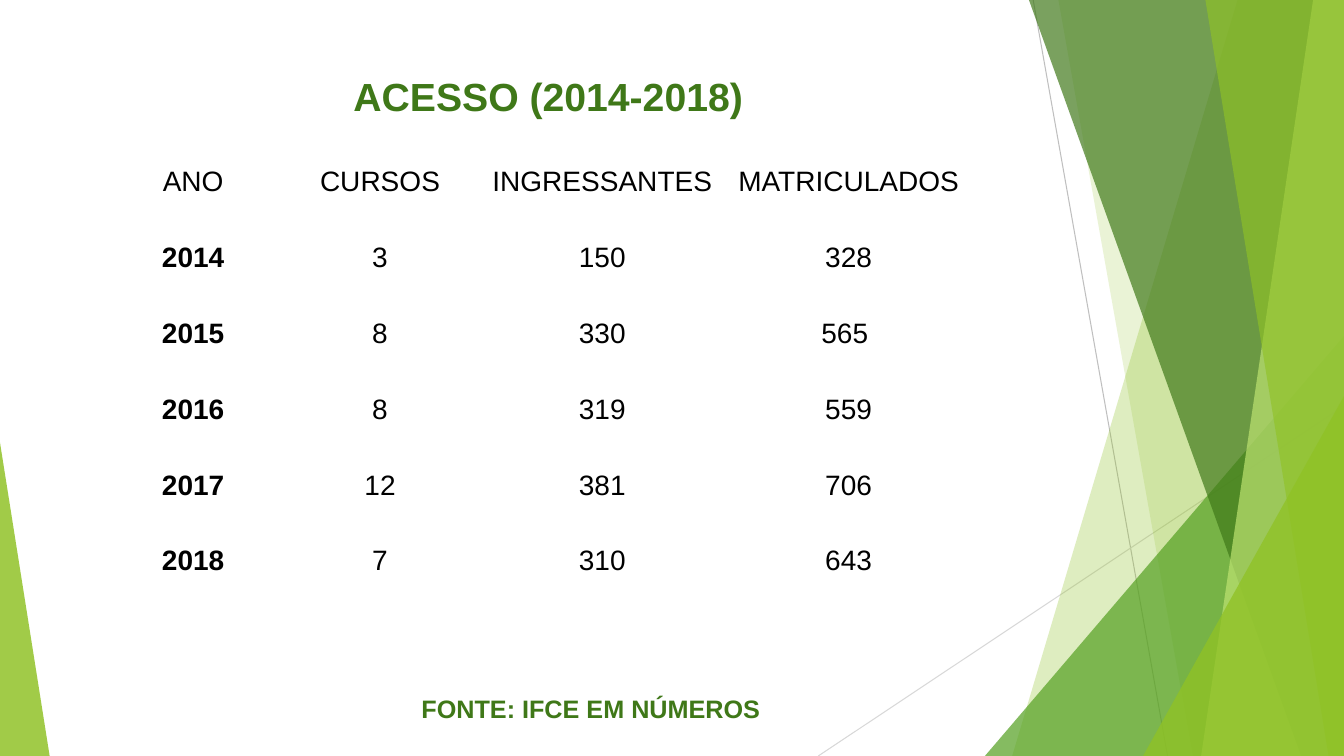
"""Builds the slide on course access from 2014 to 2018."""
from lxml.etree import SubElement
from pptx import Presentation
from pptx.dml.color import RGBColor
from pptx.enum.shapes import MSO_CONNECTOR, MSO_SHAPE
from pptx.enum.text import PP_ALIGN
from pptx.oxml.ns import qn
from pptx.util import Pt

LIME, GREEN, DARK_GREEN, PALE_LIME = "90C226", "54A021", "3F7818", "BFE472"


def paint(color_format, color, opacity=100):
    color_format.rgb = RGBColor.from_string(color)
    if opacity < 100:
        srgb = color_format._xFill.find(qn("a:srgbClr"))
        SubElement(srgb, qn("a:alpha"), val=str(opacity * 1000))


def write(frame, text, size, color, bold=False, align=PP_ALIGN.CENTER):
    paragraph = frame.paragraphs[0]
    paragraph.alignment = align
    run = paragraph.add_run()
    run.text = text
    run.font.name = "Arial"
    run.font.size = Pt(size)
    run.font.bold = bold
    paint(run.font.color, color)


presentation = Presentation()
presentation.slide_width, presentation.slide_height = Pt(960), Pt(540)
slide = presentation.slides.add_slide(presentation.slide_layouts[6])
shapes = slide.shapes

for x1, y1, x2, y2, color in [(738, 0, 834, 540, "BFBFBF"), (960, 290, 584.5, 540, "D8D8D8")]:
    ray = shapes.add_connector(MSO_CONNECTOR.STRAIGHT, Pt(x1), Pt(y1), Pt(x2), Pt(y2))
    ray.line.width = Pt(0.75)
    paint(ray.line.color, color)
    SubElement(ray._element.spPr, qn("a:effectLst"))

shards = [
    ("band", (884, 723), LIME, 29),
    ("band", (756, 852), LIME, 19),
    ("triangle", (703.5, 240, 256.5, 1), GREEN, 71),
    ("band", (735, 929.5), DARK_GREEN, 69),
    ("band", (938, 858), PALE_LIME, 69),
    ("band", (861, 949), LIME, 64),
    ("triangle", (816.5, 283, 143.5, 1), LIME, 79),
    ("triangle", (0, 316, 35.5, 0), LIME, 84),
]
for kind, geometry, color, opacity in shards:
    if kind == "band":
        top_left, bottom_left = geometry
        outline = shapes.build_freeform(Pt(top_left), Pt(0))
        outline.add_line_segments([(Pt(960), Pt(0)), (Pt(960), Pt(540)), (Pt(bottom_left), Pt(540))])
        shard = outline.convert_to_shape()
    else:
        left, top, width, apex = geometry
        shard = shapes.add_shape(MSO_SHAPE.ISOSCELES_TRIANGLE, Pt(left), Pt(top), Pt(width), Pt(540 - top))
        shard.adjustments[0] = apex
    shard.shadow.inherit = False
    shard.line.fill.background()
    shard.fill.solid()
    paint(shard.fill.fore_color, color)
    srgb = shard._element.spPr.find(qn("a:solidFill")).find(qn("a:srgbClr"))
    SubElement(srgb, qn("a:alpha"), val=str(opacity * 1000))

captions = [
    ("ACESSO (2014-2018)", 28, PP_ALIGN.CENTER, (53, 48, 677, 104)),
    ("FONTE: IFCE EM NÚMEROS", 18, PP_ALIGN.LEFT, (294, 492, 338, 29)),
]
for text, size, align, box in captions:
    caption = shapes.add_textbox(*map(Pt, box)).text_frame
    caption.word_wrap = True
    write(caption, text, size, DARK_GREEN, True, align)

access = [
    ("ANO", "CURSOS", "INGRESSANTES", "MATRICULADOS"),
    ("2014", "3", "150", "328"),
    ("2015", "8", "330", "565 "),
    ("2016", "8", "319", "559"),
    ("2017", "12", "381", "706"),
    ("2018", "7", "310", "643"),
]
table = shapes.add_table(6, 4, Pt(75.5), Pt(115), Pt(619), Pt(325)).table
table.first_row = table.horz_banding = False
for column, width in zip(table.columns, (125, 142, 175.5, 176.5)):
    column.width = Pt(width)
for row_index, values in enumerate(access):
    table.rows[row_index].height = Pt(55 if row_index == 1 else 54)
    for column_index, value in enumerate(values):
        cell = table.cell(row_index, column_index)
        cell.fill.background()
        write(cell.text_frame, value, 20, "000000", row_index > 0 and column_index == 0)

presentation.save("out.pptx")
